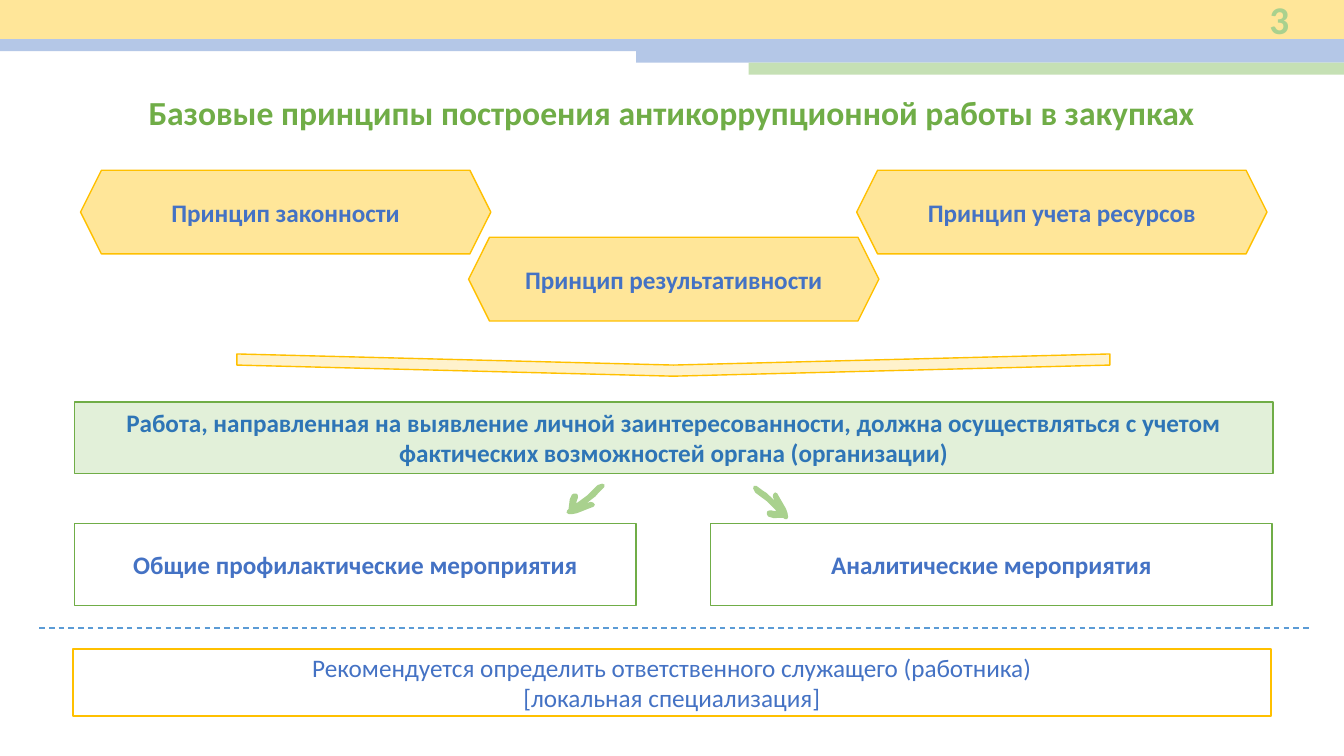
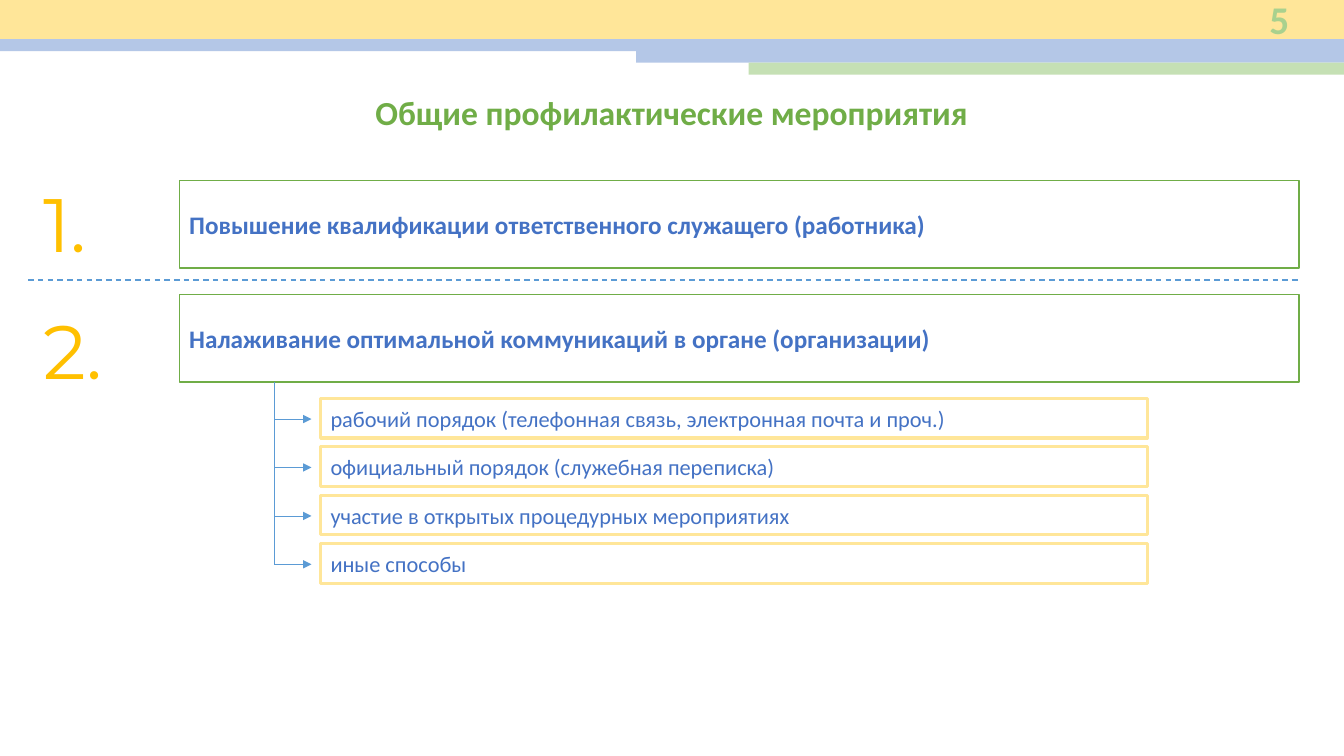
from lxml import etree
from pptx import Presentation
from pptx.dml.color import RGBColor
from pptx.enum.dml import MSO_LINE
from pptx.enum.shapes import MSO_CONNECTOR, MSO_SHAPE
from pptx.enum.text import MSO_ANCHOR, MSO_AUTO_SIZE, PP_ALIGN
from pptx.oxml.ns import qn
from pptx.util import Cm, Pt

RECT, HEXAGON, CHEVRON = MSO_SHAPE.RECTANGLE, MSO_SHAPE.HEXAGON, MSO_SHAPE.CHEVRON
STRAIGHT = MSO_CONNECTOR.STRAIGHT
DASH = MSO_LINE.DASH
LEFT, CENTER, RIGHT, JUSTIFY = PP_ALIGN.LEFT, PP_ALIGN.CENTER, PP_ALIGN.RIGHT, PP_ALIGN.JUSTIFY
TOP, MIDDLE = MSO_ANCHOR.TOP, MSO_ANCHOR.MIDDLE

FONT, NUMBER_FONT = "Calibri", "Montserrat"
YELLOW, PALE_YELLOW, GOLD = "FFE699", "FFF2CC", "FFC000"
BLUE, PALE_BLUE, DEEP_BLUE, LINE_BLUE = "4472C4", "B4C7E7", "2E75B6", "5B9BD5"
GREEN, SOFT_GREEN, BAND_GREEN, PALE_GREEN = "70AD47", "A9D18E", "C5E0B4", "E2F0D9"
WHITE = "FFFFFF"

SLIDE_W, SLIDE_H = 33.87, 19.05
BANDS = [
    (0, 0, 0.99, YELLOW),
    (0, 0.99, 0.3, PALE_BLUE),
    (16.03, 1.28, 0.3, PALE_BLUE),
    (18.87, 1.58, 0.3, BAND_GREEN),
]
PAGES = [
    ("Базовые принципы построения антикоррупционной работы в закупках", "3"),
    ("Общие профилактические мероприятия", "5"),
]
ARROW = [
    (10, 66), (0, 66), (5, 61), (8, 36), (13, 25), (18, 25), (18, 30),
    (15, 38), (13, 56), (51, 28), (61, 18), (76, 3), (86, 0), (71, 15),
    (64, 23), (28, 51), (15, 61), (56, 46), (61, 48), (53, 51), (20, 64),
]

rgb = RGBColor.from_string


def add_box(s, text, x, y, w, h, kind=RECT, fill=None, line=None, weight=1,
            size=18, bold=False, color=BLUE, font=FONT, align=CENTER, anchor=MIDDLE):
    at = Cm(x), Cm(y), Cm(w), Cm(h)
    if kind is None:
        sp = s.shapes.add_textbox(*at)
    else:
        sp = s.shapes.add_shape(kind, *at)
        sp.shadow.inherit = False
    if fill:
        sp.fill.solid()
        sp.fill.fore_color.rgb = rgb(fill)
    else:
        sp.fill.background()
    if line:
        sp.line.color.rgb = rgb(line)
        sp.line.width = Pt(weight)
    else:
        sp.line.fill.background()
    if text:
        tf = sp.text_frame
        tf.word_wrap = True
        tf.vertical_anchor = anchor
        tf.text = text
        for p in tf.paragraphs:
            p.alignment = align
            for r in p.runs:
                r.font.name = font
                r.font.size = Pt(size)
                r.font.bold = bold
                r.font.color.rgb = rgb(color)
    return sp


def add_line(s, x1, y1, x2, y2, weight=0.5, dash=None, arrow=False):
    c = s.shapes.add_connector(STRAIGHT, Cm(x1), Cm(y1), Cm(x2), Cm(y2))
    c.line.color.rgb = rgb(LINE_BLUE)
    c.line.width = Pt(weight)
    if dash:
        c.line.dash_style = dash
    spPr = c._element.spPr
    if arrow:
        etree.SubElement(spPr.get_or_add_ln(), qn("a:tailEnd"), type="triangle")
    etree.SubElement(spPr, qn("a:effectLst"))


prs = Presentation()
prs.slide_width, prs.slide_height = Cm(SLIDE_W), Cm(SLIDE_H)

for title, number in PAGES:
    s = prs.slides.add_slide(prs.slide_layouts[5])
    for x, y, h, fill in BANDS:
        add_box(s, "", x, y, SLIDE_W - x, h, fill=fill)
    sp = s.shapes.title
    sp.left, sp.top, sp.width, sp.height = Cm(1.52), Cm(2.18), Cm(30.81), Cm(1.27)
    tf = sp.text_frame
    tf.text = title
    tf.word_wrap = True
    tf.auto_size = MSO_AUTO_SIZE.NONE
    tf.vertical_anchor = TOP
    p = tf.paragraphs[0]
    p.alignment = CENTER
    r = p.runs[0]
    r.font.name, r.font.size, r.font.bold = FONT, Pt(24), True
    r.font.color.rgb = rgb(GREEN)
    add_box(s, number, 30.23, 0, 2.51, 0.97, kind=None, size=28, bold=True,
            color=SOFT_GREEN, align=RIGHT)

principles, measures = prs.slides

s = principles
names = ["Принцип законности", "Принцип результативности", "Принцип учета ресурсов"]
for i, name in enumerate(names):
    add_box(s, name, 2.03 + 9.78 * i, 4.29 + 1.69 * (i % 2), 10.34, 2.11,
            kind=HEXAGON, fill=YELLOW, line=GOLD, bold=True)

sp = add_box(s, "", 16.69, -1.8, 0.56, 22, kind=CHEVRON, fill=PALE_YELLOW, line=GOLD)
sp.rotation = 90

add_box(s, "Работа, направленная на выявление личной заинтересованности, должна "
        "осуществляться с учетом фактических возможностей органа (организации)",
        1.88, 10.13, 30.2, 1.8, fill=PALE_GREEN, line=GREEN, bold=True, color=DEEP_BLUE)

for x, y, angle in [(14.33, 12.24, 0), (18.99, 12.33, 261.5)]:
    outline = s.shapes.build_freeform(*ARROW[0], scale=Cm(0.01))
    outline.add_line_segments(ARROW[1:], close=True)
    sp = outline.convert_to_shape(Cm(x), Cm(y))
    sp.shadow.inherit = False
    sp.rotation = angle
    sp.fill.solid()
    sp.fill.fore_color.rgb = rgb(SOFT_GREEN)
    sp.line.color.rgb = rgb(SOFT_GREEN)
    sp.line.width = Pt(3)
    etree.SubElement(sp._element.spPr.get_or_add_ln(), qn("a:round"))

groups = ["Общие профилактические мероприятия", "Аналитические мероприятия"]
for i, name in enumerate(groups):
    add_box(s, name, 1.88 + 16.03 * i, 13.2, 14.15, 2.06, line=GREEN, bold=True)

add_box(s, "Рекомендуется определить ответственного служащего (работника)\n"
        "[локальная специализация]",
        1.83, 16.36, 30.2, 1.68, fill=WHITE, line=GOLD, weight=1.5)
add_line(s, 0.99, 15.82, 32.99, 15.82, weight=1, dash=DASH)

s = measures
steps = [
    ("Повышение квалификации ответственного служащего (работника)", 4.55, 4.34),
    ("Налаживание оптимальной коммуникаций в органе (организации)", 7.42, 7.54),
]
for i, (step, box_y, number_y) in enumerate(steps, 1):
    add_box(s, step, 4.52, box_y, 28.22, 2.21, line=GREEN, bold=True, align=LEFT)
    add_box(s, f"{i}.", 0.84, number_y, 3.18, 2.57, kind=None, size=54, color=GOLD,
            font=NUMBER_FONT, align=LEFT, anchor=TOP)
add_line(s, 0.71, 7.06, 32.74, 7.06, weight=1, dash=DASH)

channels = [
    "рабочий порядок (телефонная связь, электронная почта и проч.)",
    "официальный порядок (служебная переписка)",
    "участие в открытых процедурных мероприятиях",
    "иные способы",
]
add_line(s, 6.91, 9.63, 6.91, 14.22)
for i, channel in enumerate(channels):
    y = 10.56 + 1.22 * i
    add_line(s, 6.91, y, 7.85, y, arrow=True)
    add_box(s, channel, 8.08, y - 0.52, 20.83, 1, line=YELLOW, weight=2.25,
            size=16, align=JUSTIFY)

prs.save("out.pptx")
